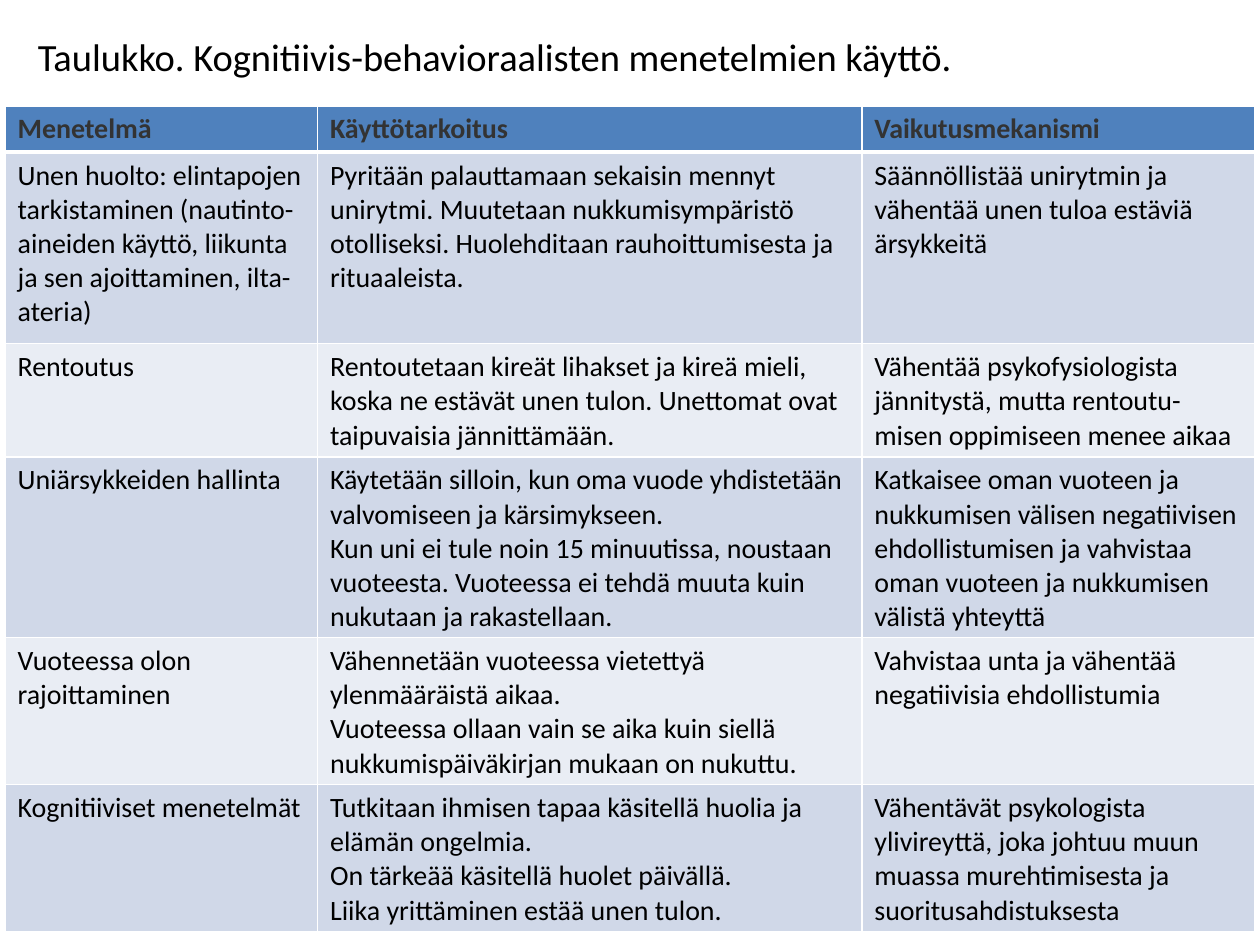
import lxml.etree
import pptx
import pptx.dml.color
import pptx.enum.text
import pptx.oxml.ns
import pptx.util
from pptx.util import Inches

RGBColor = pptx.dml.color.RGBColor
BLACK = RGBColor(0x00, 0x00, 0x00)
WHITE = RGBColor(0xFF, 0xFF, 0xFF)
HEADER_TEXT = RGBColor(0x33, 0x33, 0x33)
HEADER_FILL = RGBColor(0x4F, 0x81, 0xBD)
BAND_FILLS = [RGBColor(0xE9, 0xED, 0xF4), RGBColor(0xD0, 0xD8, 0xE8)]
FONT_NAME = "Calibri"

COLUMN_WIDTHS = [2.48, 4.32, 3.12]
ROW_HEIGHTS = [0.23, 1.52, 0.86, 1.35, 1.1, 1.1]
METHODS = [
    ["Menetelmä", "Käyttötarkoitus", "Vaikutusmekanismi"],
    [
        "Unen huolto: elintapojen tarkistaminen (nautinto-aineiden käyttö, "
        "liikunta ja sen ajoittaminen, ilta-ateria)",
        "Pyritään palauttamaan sekaisin mennyt unirytmi. Muutetaan "
        "nukkumisympäristö otolliseksi. Huolehditaan rauhoittumisesta ja rituaaleista.",
        "Säännöllistää unirytmin ja vähentää unen tuloa estäviä ärsykkeitä",
    ],
    [
        "Rentoutus",
        "Rentoutetaan kireät lihakset ja kireä mieli, koska ne estävät unen tulon. "
        "Unettomat ovat taipuvaisia jännittämään.",
        "Vähentää psykofysiologista jännitystä, mutta rentoutu-misen oppimiseen menee aikaa",
    ],
    [
        "Uniärsykkeiden hallinta",
        "Käytetään silloin, kun oma vuode yhdistetään valvomiseen ja kärsimykseen.\n"
        "Kun uni ei tule noin 15 minuutissa, noustaan vuoteesta. "
        "Vuoteessa ei tehdä muuta kuin nukutaan ja rakastellaan.",
        "Katkaisee oman vuoteen ja nukkumisen välisen negatiivisen ehdollistumisen "
        "ja vahvistaa oman vuoteen ja nukkumisen välistä yhteyttä",
    ],
    [
        "Vuoteessa olon rajoittaminen",
        "Vähennetään vuoteessa vietettyä ylenmääräistä aikaa.\n"
        "Vuoteessa ollaan vain se aika kuin siellä nukkumispäiväkirjan mukaan on nukuttu.",
        "Vahvistaa unta ja vähentää negatiivisia ehdollistumia",
    ],
    [
        "Kognitiiviset menetelmät",
        "Tutkitaan ihmisen tapaa käsitellä huolia ja elämän ongelmia.\n"
        "On tärkeää käsitellä huolet päivällä.\n"
        "Liika yrittäminen estää unen tulon.",
        "Vähentävät psykologista ylivireyttä, joka johtuu muun muassa "
        "murehtimisesta ja suoritusahdistuksesta",
    ],
]


def add_text(paragraph, text, size, color, bold=False):
    for index, line in enumerate(text.split("\n")):
        if index:
            paragraph.add_line_break()
        run = paragraph.add_run()
        run.text = line
        run.font.name = FONT_NAME
        run.font.size = pptx.util.Pt(size)
        run.font.bold = bold
        run.font.color.rgb = color


def set_borders(cell, row_index):
    widths = {
        "lnL": 1,
        "lnR": 1,
        "lnT": 3 if row_index == 1 else 1,
        "lnB": 3 if row_index == 0 else 1,
    }
    properties = cell._tc.get_or_add_tcPr()
    qualified = pptx.oxml.ns.qn
    for side, width in widths.items():
        line = lxml.etree.SubElement(
            properties, qualified("a:" + side), w=str(pptx.util.Pt(width))
        )
        fill = lxml.etree.SubElement(line, qualified("a:solidFill"))
        lxml.etree.SubElement(fill, qualified("a:srgbClr"), val=str(WHITE))


def add_title(slide, left, top, width, height):
    title = slide.shapes.title
    title.left, title.top, title.width, title.height = left, top, width, height
    frame = title.text_frame
    frame.word_wrap = False
    frame.auto_size = pptx.enum.text.MSO_AUTO_SIZE.SHAPE_TO_FIT_TEXT
    frame.vertical_anchor = pptx.enum.text.MSO_ANCHOR.TOP
    paragraph = frame.paragraphs[0]
    paragraph.alignment = pptx.enum.text.PP_ALIGN.LEFT
    add_text(
        paragraph,
        "Taulukko. Kognitiivis-behavioraalisten menetelmien käyttö.",
        22,
        BLACK,
    )


def add_methods_table(slide, left, top, width, height):
    table = slide.shapes.add_table(
        len(METHODS), len(COLUMN_WIDTHS), left, top, width, height
    ).table
    for column, column_width in zip(table.columns, COLUMN_WIDTHS):
        column.width = Inches(column_width)
    for row_index, texts in enumerate(METHODS):
        table.rows[row_index].height = Inches(ROW_HEIGHTS[row_index])
        is_header = row_index == 0
        for column_index, text in enumerate(texts):
            cell = table.cell(row_index, column_index)
            set_borders(cell, row_index)
            cell.fill.solid()
            cell.fill.fore_color.rgb = (
                HEADER_FILL if is_header else BAND_FILLS[row_index % 2]
            )
            color = HEADER_TEXT if is_header else BLACK
            add_text(cell.text_frame.paragraphs[0], text, 16, color, is_header)


def main():
    presentation = pptx.Presentation()
    presentation.slide_width = Inches(10)
    presentation.slide_height = Inches(7.5)
    slide = presentation.slides.add_slide(presentation.slide_layouts[5])
    add_methods_table(slide, Inches(0.04), Inches(0.84), Inches(9.92), Inches(6.56))
    add_title(slide, Inches(0.2), Inches(0.21), Inches(7.54), Inches(0.47))
    presentation.save("out.pptx")


if __name__ == "__main__":
    main()
